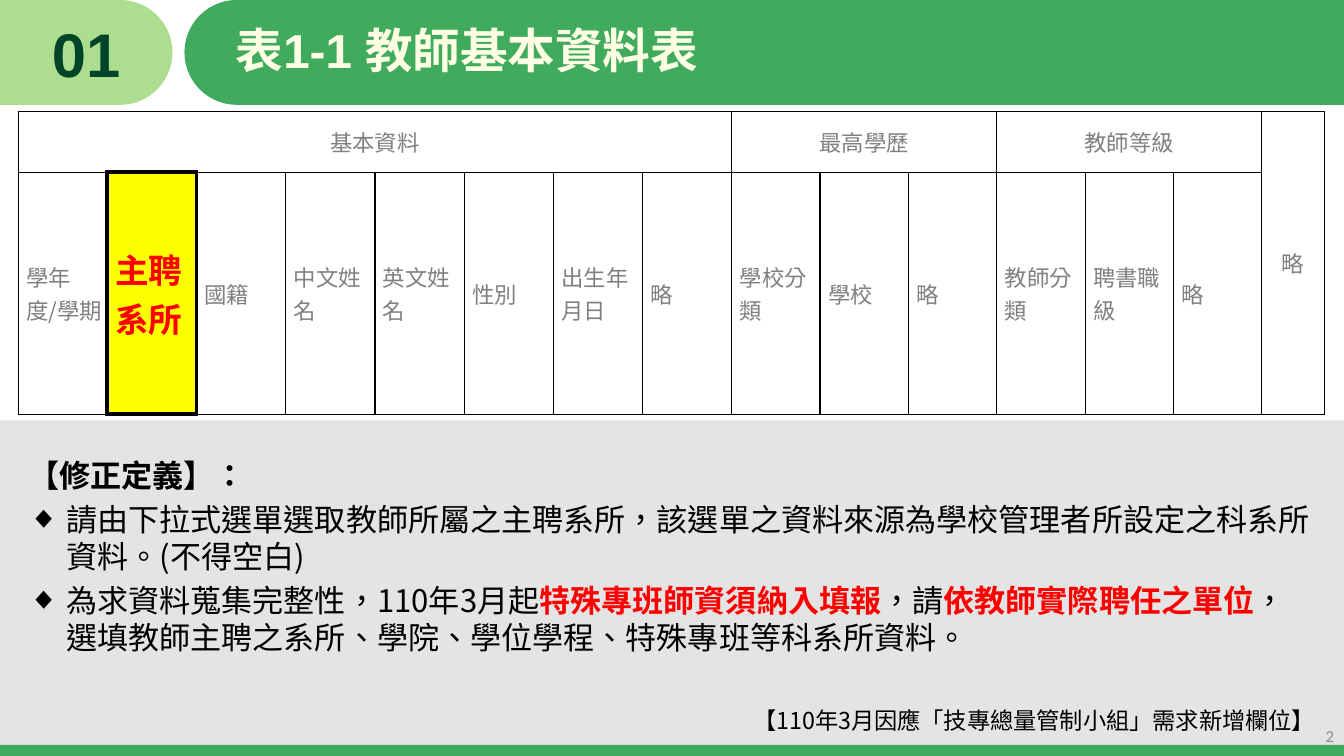
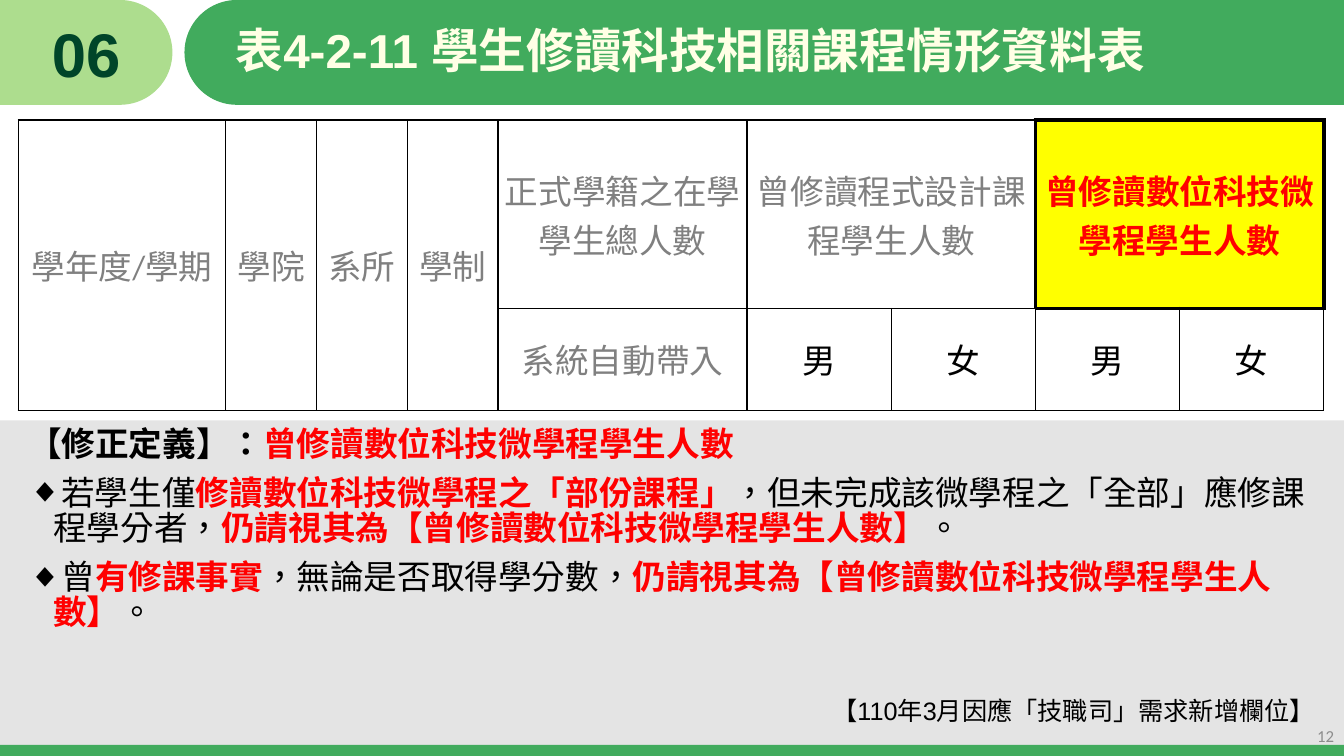
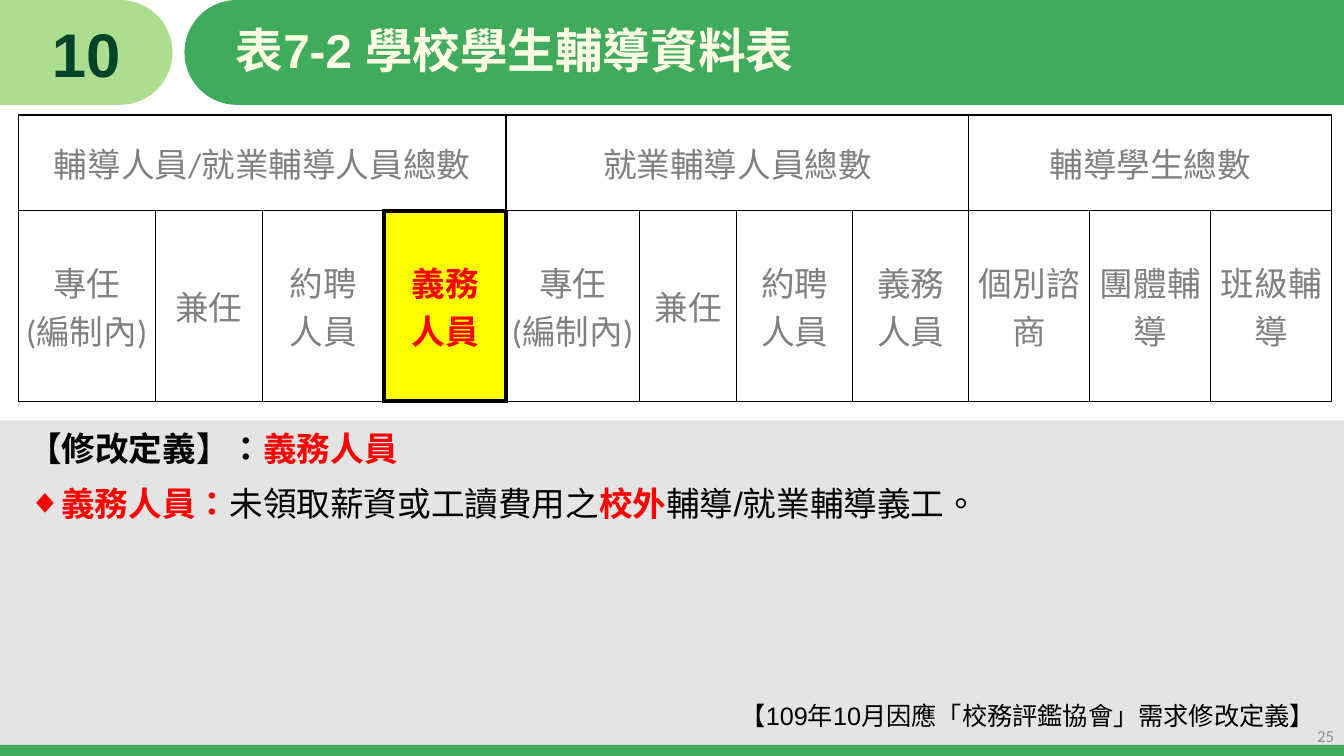
"""Build three slides on revised definitions in school data forms."""
from pptx import Presentation
from pptx.dml.color import RGBColor
from pptx.enum.lang import MSO_LANGUAGE_ID as Lang
from pptx.enum.shapes import MSO_SHAPE as Shape
from pptx.enum.text import MSO_ANCHOR as Anchor, PP_ALIGN as Align
from pptx.oxml.xmlchemy import OxmlElement
from pptx.util import Inches, Pt

GREEN = RGBColor(0x41, 0xAB, 0x5D)
LIGHT_GREEN = RGBColor(0xAD, 0xDD, 0x8E)
DARK_GREEN = RGBColor(0x00, 0x45, 0x29)
CREAM = RGBColor(0xFF, 0xFF, 0xE5)
PANEL_GREY = RGBColor(0xBF, 0xBF, 0xBF)
TEXT_GREY = RGBColor(0x80, 0x80, 0x80)
PAGE_GREY = RGBColor(0x8C, 0x8C, 0x8C)
BLACK = RGBColor(0, 0, 0)
WHITE = RGBColor(0xFF, 0xFF, 0xFF)
RED = RGBColor(0xFF, 0, 0)
YELLOW = RGBColor(0xFF, 0xFF, 0)

ARIAL, CALIBRI, NOTO = "Arial", "Calibri", "Noto Sans CJK SC"
LEFT, UP = "<", "^"
EDGES = {"a:lnL": (0, -1), "a:lnR": (0, 1), "a:lnT": (-1, 0), "a:lnB": (1, 0)}

SLIDES = [
    {
        "number": "01", "title": "表1-1 教師基本資料表", "page": "2",
        "table": {
            "top": 1.11, "size": 16, "font": NOTO, "inset": 0, "row_insets": (0, 0.08),
            "columns": [7.08 / 8] * 8 + [5.26 / 6] * 6 + [0.62],
            "heights": [0.6, 2.4],
            "rows": [
                ["基本資料"] + [LEFT] * 7 + ["最高學歷", LEFT, LEFT, "教師等級", LEFT, LEFT, "略"],
                ["學年度/學期", "主聘系所", "國籍", "中文姓名", "英文姓名", "性別", "出生年月日", "略",
                 "學校分類", "學校", "略", "教師分類", "聘書職級", "略", UP],
            ],
            "revised": {(1, 1)},
        },
        "body": {
            "top": 4.48, "size": 22.2, "font": NOTO, "spacing": 1.0, "before": 4.5, "hang": 0.38,
            "paragraphs": [
                "【修正定義】：",
                "請由下拉式選單選取教師所屬之主聘系所，該選單之資料來源為學校管理者所設定之科系所資料。(不得空白)",
                "為求資料蒐集完整性，110年3月起*特殊專班師資須納入填報*，請*依教師實際聘任之單位*"
                "，選填教師主聘之系所、學院、學位學程、特殊專班等科系所資料。",
            ],
        },
        "note": ("【110年3月因應「技專總量管制小組」需求新增欄位】", 16.6, NOTO, 7.14),
    },
    {
        "number": "06", "title": "表4-2-11 學生修讀科技相關課程情形資料表", "page": "12",
        "table": {
            "top": 1.19, "size": 24, "font": CALIBRI, "inset": 0.02, "row_insets": (),
            "columns": [2.06, 0.9, 0.9, 0.9, 2.47] + [1.43] * 4,
            "heights": [1.87, 1.01],
            "rows": [
                ["學年度/學期", "學院", "系所", "學制", "正式學籍之在學學生總人數",
                 "曾修讀程式設計課程學生人數", LEFT, "曾修讀數位科技微學程學生人數", LEFT],
                [UP] * 4 + ["系統自動帶入", "男", "女", "男", "女"],
            ],
            "revised": {(0, 7), (0, 8)},
        },
        "body": {
            "top": 4.2, "size": 24, "font": ARIAL, "spacing": 0.87, "before": 10, "hang": 0.25,
            "paragraphs": [
                "【修正定義】：*曾修讀數位科技微學程學生人數*",
                "若學生僅*修讀數位科技微學程之「部份課程」*，但未完成該微學程之「全部」應修課程學分者，"
                "*仍請視其為【曾修讀數位科技微學程學生人數】*。",
                "曾*有修課事實*，無論是否取得學分數，*仍請視其為【曾修讀數位科技微學程學生人數】*。",
            ],
        },
        "note": ("【110年3月因應「技職司」需求新增欄位】", 18, ARIAL, 7.05),
    },
    {
        "number": "10", "title": "表7-2 學校學生輔導資料表", "page": "25",
        "table": {
            "top": 1.14, "size": 24, "font": CALIBRI, "inset": 0.02, "row_insets": (),
            "columns": [1.36, 1.06, 1.21, 1.21, 1.32, 0.97, 1.15, 1.15, 1.2, 1.2, 1.2],
            "heights": [0.95, 1.89],
            "rows": [
                ["輔導人員/就業輔導人員總數", LEFT, LEFT, LEFT, "就業輔導人員總數", LEFT, LEFT, LEFT,
                 "輔導學生總數", LEFT, LEFT],
                ["專任\n(編制內)", "兼任", "約聘\n人員", "義務\n人員"] * 2
                + ["個別諮商", "團體輔導", "班級輔導"],
            ],
            "revised": {(1, 3)},
        },
        "body": {
            "top": 4.2, "size": 24, "font": ARIAL, "spacing": 1.0, "before": 10, "hang": 0.25,
            "paragraphs": [
                "【修改定義】：*義務人員*",
                "*義務人員：*未領取薪資或工讀費用之*校外*輔導/就業輔導義工。",
            ],
        },
        "note": ("【109年10月因應「校務評鑑協會」需求修改定義】", 18, ARIAL, 7.1),
    },
]

FRAME = [
    (Shape.RECTANGLE, 0, 7.39, 13.33, 0.12, GREEN),
    (Shape.RECTANGLE, 0, 0, 1.19, 1.04, LIGHT_GREEN),
    (Shape.OVAL, 0.67, 0, 1.04, 1.04, LIGHT_GREEN),
    (Shape.OVAL, 1.83, 0, 1.04, 1.04, GREEN),
    (Shape.RECTANGLE, 2.35, 0, 10.99, 1.04, GREEN),
]


def add_child(parent, tag, **attributes):
    child = OxmlElement(tag)
    for key, value in attributes.items():
        child.set(key, value)
    parent.append(child)
    return child


def style(paragraph, size, face, color, bold=False, align=Align.LEFT):
    paragraph.alignment = align
    font = paragraph.font
    font.size, font.name, font.bold = Pt(size), face, bold
    font.color.rgb = color
    font.language_id = Lang.TRADITIONAL_CHINESE
    add_child(font._rPr, "a:ea", typeface=NOTO)


def add_block(slide, kind, left, top, width, height, color):
    block = slide.shapes.add_shape(kind, Inches(left), Inches(top), Inches(width), Inches(height))
    block.shadow.inherit = False
    block.fill.solid()
    block.fill.fore_color.rgb = color
    block.line.fill.background()
    return block


def add_frame(slide):
    panel = add_block(slide, Shape.RECTANGLE, 0, 4.17, 13.33, 3.33, PANEL_GREY)
    add_child(panel.fill._xPr.solidFill[0], "a:alpha", val="41000")
    for block in FRAME:
        add_block(slide, *block)


def add_frame_text(slide, left, top, width, height, anchor=Anchor.MIDDLE):
    box = slide.shapes.add_textbox(Inches(left), Inches(top), Inches(width), Inches(height))
    box.text_frame.word_wrap = True
    box.text_frame.vertical_anchor = anchor
    return box.text_frame


def add_line(slide, text, box, size, face, color, bold=False, align=Align.LEFT):
    paragraph = add_frame_text(slide, *box).paragraphs[0]
    paragraph.text = text
    style(paragraph, size, face, color, bold, align)
    return paragraph


def add_bullet(paragraph, hang):
    properties = paragraph._p.get_or_add_pPr()
    properties.set("marL", str(Inches(hang)))
    properties.set("indent", str(-Inches(hang)))
    for tag, key, value in (("a:buFont", "typeface", ARIAL), ("a:buChar", "char", "◆")):
        bullet = OxmlElement(tag)
        bullet.set(key, value)
        properties.insert_element_before(bullet, "a:tabLst", "a:defRPr", "a:extLst")


def add_body(slide, top, size, font, spacing, before, hang, paragraphs):
    frame = add_frame_text(slide, 0.18, top, 12.96, 6.8 - top, Anchor.TOP)
    for index, text in enumerate(paragraphs):
        paragraph = frame.add_paragraph() if index else frame.paragraphs[0]
        style(paragraph, size, font, BLACK, bold=index == 0)
        paragraph.line_spacing = spacing
        paragraph.space_before = Pt(before)
        if index:
            add_bullet(paragraph, hang)
        for part, words in enumerate(text.split("*")):
            if words:
                run = paragraph.add_run()
                run.text = words
                if part % 2:
                    run.font.bold = True
                    run.font.color.rgb = RED


def add_borders(cell, row, column, revised):
    properties = cell._tc.get_or_add_tcPr()
    for tag, (down, across) in EDGES.items():
        thick = (row, column) in revised or (row + down, column + across) in revised
        line = add_child(properties, tag, w=str(Pt(3 if thick else 1)))
        add_child(add_child(line, "a:solidFill"), "a:srgbClr", val=str(BLACK))


def fill_cell(cell, text, size, face, inset, left_inset, revised):
    cell.vertical_anchor = Anchor.MIDDLE
    cell.margin_top = cell.margin_bottom = 0
    cell.margin_left = Inches(left_inset or inset)
    cell.margin_right = Inches(inset)
    cell.fill.solid()
    cell.fill.fore_color.rgb = YELLOW if revised else WHITE
    if text in (LEFT, UP):
        return
    cell.text = text
    color = RED if revised else BLACK if text in ("男", "女") else TEXT_GREY
    for paragraph in cell.text_frame.paragraphs:
        style(paragraph, 24 if revised else size, face, color, revised,
              Align.LEFT if left_inset else Align.CENTER)


def add_form(slide, top, size, font, inset, row_insets, columns, heights, rows, revised):
    form = slide.shapes.add_table(len(rows), len(columns), Inches(0.18), Inches(top),
                                  Inches(sum(columns)), Inches(sum(heights))).table
    form.first_row = form.horz_banding = False
    for column, width in zip(form.columns, columns):
        column.width = Inches(width)
    for row, height in zip(form.rows, heights):
        row.height = Inches(height)
    for r, texts in enumerate(rows):
        for c, text in enumerate(texts):
            cell = form.cell(r, c)
            add_borders(cell, r, c, revised)
            left_inset = row_insets[r] if row_insets else 0
            fill_cell(cell, text, size, font, inset, left_inset, (r, c) in revised)
    for r, texts in enumerate(rows):
        for c, text in enumerate(texts):
            if text in (LEFT, UP):
                continue
            right, bottom = c, r
            while right + 1 < len(texts) and texts[right + 1] == LEFT:
                right += 1
            while bottom + 1 < len(rows) and rows[bottom + 1][c] == UP:
                bottom += 1
            if (bottom, right) != (r, c):
                form.cell(r, c).merge(form.cell(bottom, right))


def main():
    deck = Presentation()
    deck.slide_width, deck.slide_height = Inches(13.33), Inches(7.5)
    for content in SLIDES:
        slide = deck.slides.add_slide(deck.slide_layouts[6])
        add_frame(slide)
        title = add_line(slide, content["title"], (2.24, 0, 10.9, 1.05), 34, ARIAL, CREAM, True)
        title.line_spacing = 0.9
        number = add_line(slide, content["number"], (0, 0, 1.71, 1.05), 44, ARIAL, DARK_GREEN,
                          True, Align.CENTER)
        number.space_before = Pt(10)
        add_form(slide, **content["table"])
        add_body(slide, **content["body"])
        note, size, face, middle = content["note"]
        add_line(slide, note, (0.18, middle - 0.2, 12.96, 0.4), size, face, BLACK,
                 align=Align.RIGHT)
        add_line(slide, content["page"], (10.33, 7.1, 3, 0.4), 12, CALIBRI, PAGE_GREY,
                 align=Align.RIGHT)
    deck.save("out.pptx")


if __name__ == "__main__":
    main()
